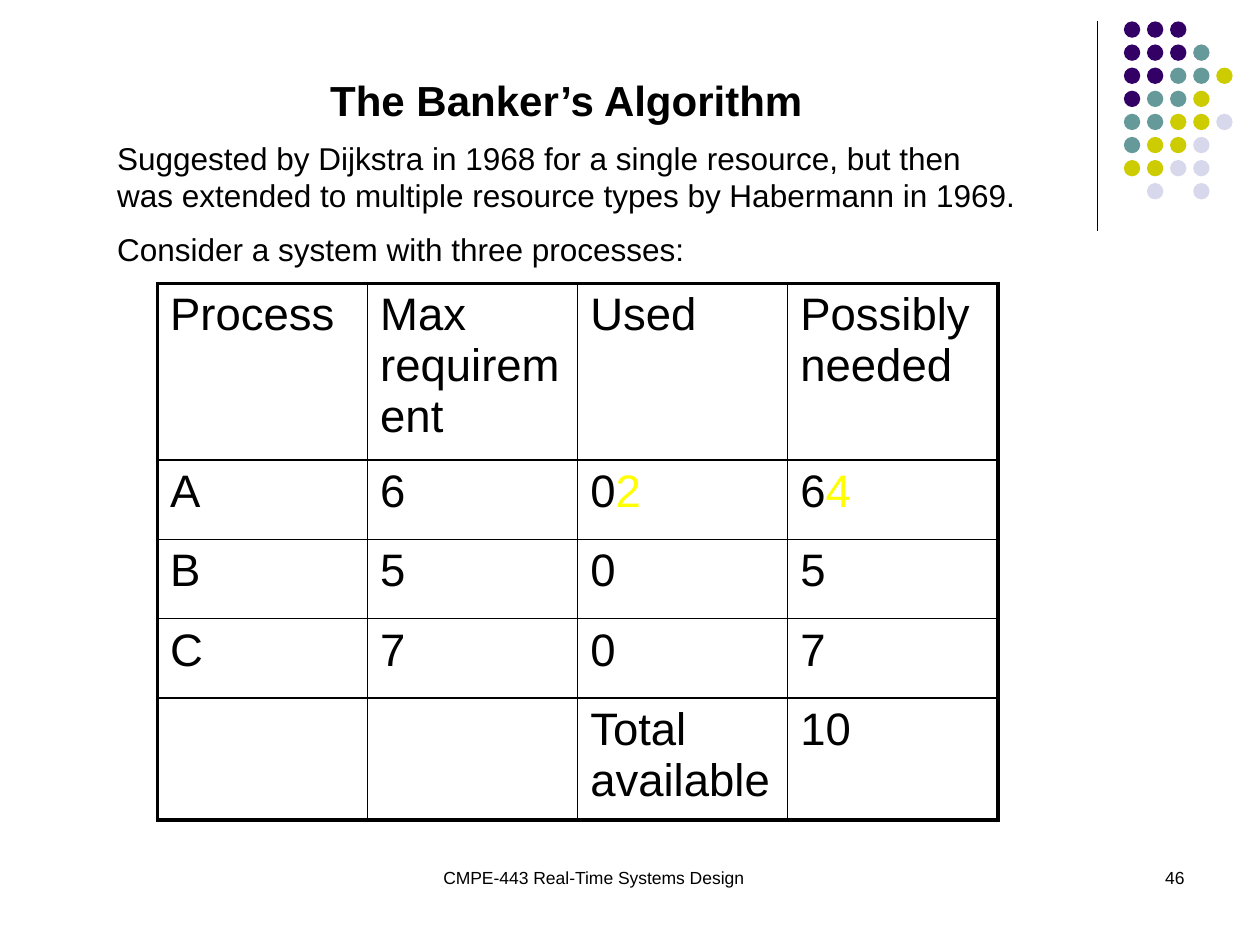
"""Build the Banker's Algorithm slide with its process table."""
import pptx
import pptx.dml.color
import pptx.enum.shapes
import pptx.enum.text
import pptx.oxml
import pptx.oxml.ns
import pptx.util
from lxml import etree
from pptx.util import Inches

BLACK = "000000"
YELLOW = "FFFF00"


def color(hex_string):
    return pptx.dml.color.RGBColor.from_string(hex_string)


def add_run(paragraph, text, size, hex_string=BLACK, bold=False):
    run = paragraph.add_run()
    run.text = text
    run.font.name = "Arial"
    run.font.size = pptx.util.Pt(size)
    run.font.bold = bold
    run.font.color.rgb = color(hex_string)


presentation = pptx.Presentation()
presentation.slide_width = Inches(10)
presentation.slide_height = Inches(7.5)
slide = presentation.slides.add_slide(presentation.slide_layouts[1])

divider = slide.shapes.add_connector(
    pptx.enum.shapes.MSO_CONNECTOR.STRAIGHT, Inches(8.71), Inches(0.17), Inches(8.71), Inches(1.83))
divider.line.color.rgb = color(BLACK)
divider.line.width = pptx.util.Pt(0.75)
etree.SubElement(divider._element.spPr, pptx.oxml.ns.qn("a:effectLst"))

dot_colors = {"P": "330066", "T": "669999", "Y": "CCCC00", "L": "D8D8EC"}
dot_rows = ["PPP", "PPPT", "PPTTY", "PTTY", "TTYYL", "TYYL", "YYLL", " L L"]
dot_pitch = 0.55 / 3
dots = slide.shapes.add_group_shape()
for row, letters in enumerate(dot_rows):
    for column, letter in enumerate(letters):
        if letter in dot_colors:
            dot = dots.shapes.add_shape(
                pptx.enum.shapes.MSO_SHAPE.OVAL,
                Inches(8.92 + column * dot_pitch), Inches(0.17 + row * dot_pitch),
                Inches(0.13), Inches(0.13))
            dot.shadow.inherit = False
            dot.fill.solid()
            dot.fill.fore_color.rgb = color(dot_colors[letter])
            dot.line.fill.background()

title = slide.shapes.title
body = slide.placeholders[1]
for placeholder, top, height in [(title, 0.54, 0.5), (body, 1.05, 1.15)]:
    placeholder.left, placeholder.top = Inches(0.83), Inches(top)
    placeholder.width, placeholder.height = Inches(7.33), Inches(height)
    placeholder.text_frame.auto_size = pptx.enum.text.MSO_AUTO_SIZE.NONE
    placeholder.text_frame.vertical_anchor = pptx.enum.text.MSO_ANCHOR.TOP

title_paragraph = title.text_frame.paragraphs[0]
title_paragraph.alignment = pptx.enum.text.PP_ALIGN.CENTER
add_run(title_paragraph, "The Banker’s Algorithm", 24, bold=True)

sentences = [
    "Suggested by Dijkstra in 1968 for a single resource, but then was extended "
    "to multiple resource types by Habermann in 1969.",
    "Consider a system with three processes:",
]
for index, sentence in enumerate(sentences):
    paragraph = body.text_frame.add_paragraph() if index else body.text_frame.paragraphs[0]
    properties = paragraph._p.get_or_add_pPr()
    properties.set("marL", "0")
    properties.set("indent", "0")
    etree.SubElement(properties, pptx.oxml.ns.qn("a:buNone"))
    paragraph.space_before = pptx.util.Pt(9 if index else 0)
    add_run(paragraph, sentence, 18)

table_rows = [
    ["Process", "Max requirement", "Used", "Possibly needed"],
    ["A", "6", ("0", "2"), ("6", "4")],
    ["B", "5", "0", "5"],
    ["C", "7", "0", "7"],
    ["", "", "Total available", "10"],
]
row_heights = [1.4, 0.63, 0.63, 0.63, 0.97]
row_count, column_count = len(table_rows), len(table_rows[0])
table = slide.shapes.add_table(
    row_count, column_count, Inches(1.25), Inches(2.25), Inches(6.67), Inches(sum(row_heights))).table
table.first_row = False
table.horz_banding = False
for row, values in enumerate(table_rows):
    table.rows[row].height = Inches(row_heights[row])
    for column, value in enumerate(values):
        cell = table.cell(row, column)
        cell.fill.background()
        runs = [value] if isinstance(value, str) else value
        for text, hex_string in zip(runs, [BLACK, YELLOW]):
            if text:
                add_run(cell.text_frame.paragraphs[0], text, 26, hex_string)
        outer_edges = {
            "lnL": column == 0,
            "lnR": column == column_count - 1,
            "lnT": row == 0,
            "lnB": row == row_count - 1,
        }
        for position, (edge, is_outer) in enumerate(outer_edges.items()):
            width = pptx.util.Pt(2.25 if is_outer else 1)
            border = pptx.oxml.parse_xml(
                f'<a:{edge} {pptx.oxml.ns.nsdecls("a")} w="{width}"><a:solidFill>'
                f'<a:srgbClr val="{BLACK}"/></a:solidFill></a:{edge}>')
            cell._tc.get_or_add_tcPr().insert(position, border)

footers = [
    (3.42, 3.17, "CMPE-443 Real-Time Systems Design", pptx.enum.text.PP_ALIGN.LEFT),
    (7.17, 2.33, "46", pptx.enum.text.PP_ALIGN.RIGHT),
]
for left, width, text, alignment in footers:
    footer = slide.shapes.add_textbox(Inches(left), Inches(6.83), Inches(width), Inches(0.5))
    footer.text_frame.word_wrap = True
    footer_paragraph = footer.text_frame.paragraphs[0]
    footer_paragraph.alignment = alignment
    add_run(footer_paragraph, text, 10)

presentation.save("out.pptx")
